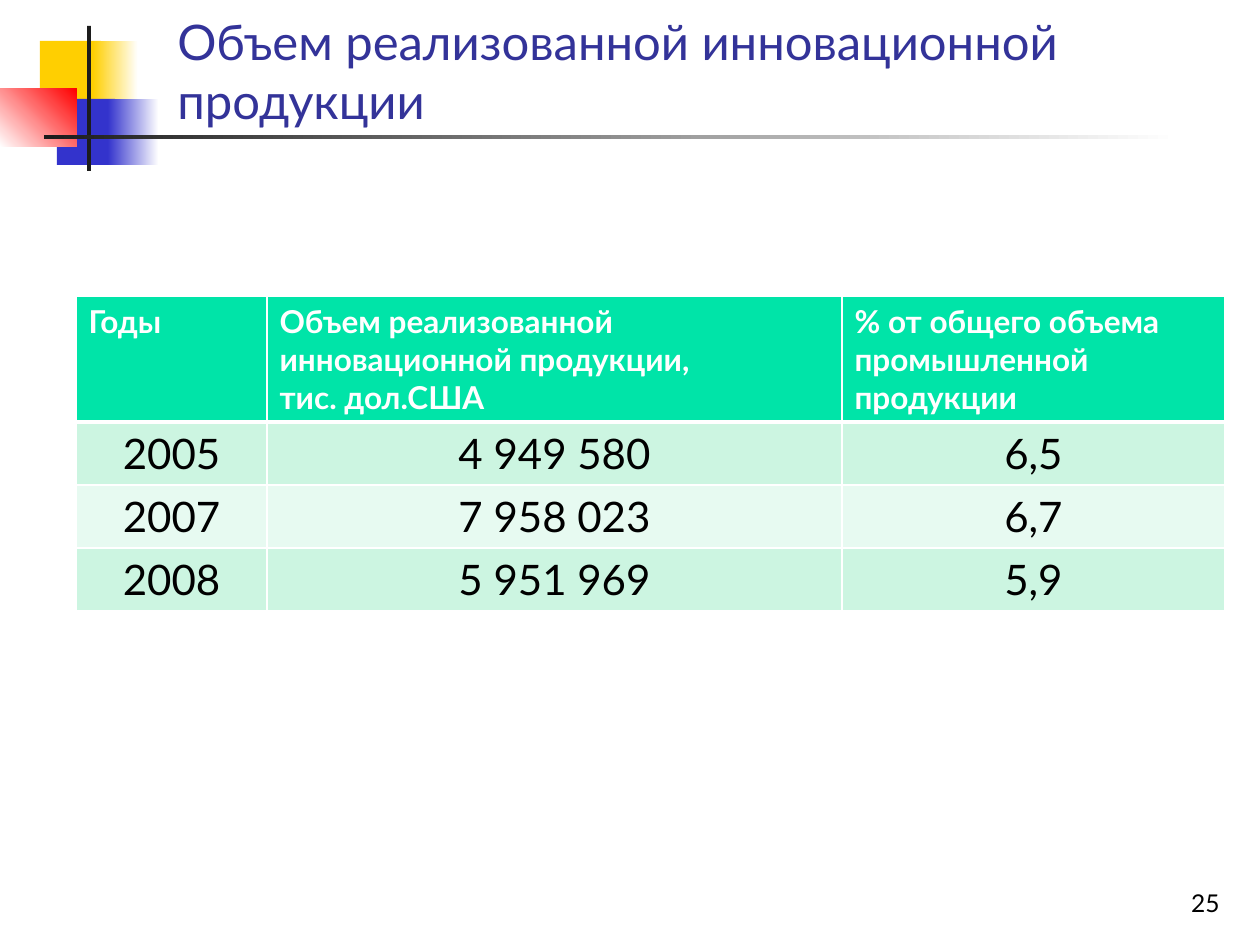
from dataclasses import dataclass

from lxml import etree
from pptx import Presentation
from pptx.dml.color import RGBColor
from pptx.enum.shapes import MSO_SHAPE
from pptx.enum.text import MSO_ANCHOR, PP_ALIGN
from pptx.oxml.ns import qn
from pptx.util import Emu, Pt

RECT = MSO_SHAPE.RECTANGLE
BOTTOM = MSO_ANCHOR.BOTTOM
LEFT, CENTER, RIGHT = PP_ALIGN.LEFT, PP_ALIGN.CENTER, PP_ALIGN.RIGHT


@dataclass(frozen=True)
class Theme:
    font: str = "Lato"
    white: str = "FFFFFF"
    black: str = "000000"
    yellow: str = "FFCF01"
    blue: str = "3333CC"
    red: str = "FF0000"
    dark: str = "1C1C1C"
    title: str = "333399"
    header: str = "00E4A8"
    bands: tuple = ("CCF5E1", "E7FAF1")
    title_size: int = 28
    header_size: int = 18
    body_size: int = 24
    number_size: int = 14


T = Theme()

# Content
TITLE = "Объем реализованной инновационной продукции"
PAGE_NUMBER = "25"
HEADER = [
    ["Годы"],
    ["Объем реализованной инновационной продукции,", "тис. дол.США"],
    ["% от общего объема промышленной продукции"],
]
ROWS = [
    ["2005", "4 949 580", "6,5"],
    ["2007", "7 958 023", "6,7"],
    ["2008", "5 951 969", "5,9"],
]

# Ornament: box in px, start colour, end colour (None = solid), angle
ORNAMENT = [
    ((40, 41, 61, 66), T.yellow, None, 0),
    ((93, 41, 45, 66), T.yellow, T.white, 0),
    ((57, 99, 58, 66), T.blue, None, 0),
    ((108, 99, 51, 66), T.blue, T.white, 0),
    ((0, 89, 77, 58), T.white, T.red, 45),
    ((87, 26, 4, 145), T.dark, None, 0),
    ((44, 135, 1134, 4), T.dark, T.white, 0),
]

# Layout in px
SCALE = 914400 // 126
SLIDE = (1260, 945)
TITLE_BOX = (165, 29, 1067, 106)
NUMBER_BOX = (970, 861, 262, 63)
TABLE_AT = (76, 296)
COLUMNS = [191, 575, 383]
HEADER_H, ROW_H = 126, 63


def px(*values):
    return [Emu(v * SCALE) for v in values]


def rgb(value):
    return RGBColor.from_string(value)


def write(tf, lines, size, color, align=LEFT, bold=False):
    tf.word_wrap = True
    for i, line in enumerate(lines):
        p = tf.paragraphs[0] if i == 0 else tf.add_paragraph()
        p.alignment = align
        r = p.add_run()
        r.text = line
        r.font.name, r.font.size, r.font.bold = T.font, Pt(size), bold
        r.font.color.rgb = rgb(color)


def add_text(s, box, text, size, color, align=LEFT):
    tf = s.shapes.add_textbox(*px(*box)).text_frame
    tf.vertical_anchor = BOTTOM
    write(tf, [text], size, color, align)


def add_block(s, box, start, end, angle):
    sp = s.shapes.add_shape(RECT, *px(*box))
    sp.shadow.inherit = False
    sp.line.fill.background()
    if end is None:
        sp.fill.solid()
        sp.fill.fore_color.rgb = rgb(start)
        return
    sp.fill.gradient()
    sp.fill.gradient_angle = angle
    for stop, color, position in zip(sp.fill.gradient_stops, (start, end), (0, 1)):
        stop.color.rgb = rgb(color)
        stop.position = position


def set_cell(cell, fill, top=1, bottom=1):
    # Borders come before the fill in the cell properties
    tc_pr = cell._tc.get_or_add_tcPr()
    for side, width in (("L", 1), ("R", 1), ("T", top), ("B", bottom)):
        ln = etree.SubElement(tc_pr, qn(f"a:ln{side}"), w=str(Pt(width)))
        solid = etree.SubElement(ln, qn("a:solidFill"))
        etree.SubElement(solid, qn("a:srgbClr"), val=T.white)
    cell.fill.solid()
    cell.fill.fore_color.rgb = rgb(fill)


def add_data_table(s):
    size = (sum(COLUMNS), HEADER_H + ROW_H * len(ROWS))
    table = s.shapes.add_table(
        len(ROWS) + 1, len(COLUMNS), *px(*TABLE_AT, *size)).table
    for column, width in zip(table.columns, px(*COLUMNS)):
        column.width = width
    for row, height in zip(table.rows, px(HEADER_H, *[ROW_H] * len(ROWS))):
        row.height = height
    for c, lines in enumerate(HEADER):
        cell = table.cell(0, c)
        set_cell(cell, T.header, bottom=3)
        write(cell.text_frame, lines, T.header_size, T.white, bold=True)
    for r, values in enumerate(ROWS):
        for c, value in enumerate(values):
            cell = table.cell(r + 1, c)
            set_cell(cell, T.bands[r % 2], top=3 if r == 0 else 1)
            write(cell.text_frame, [value], T.body_size, T.black, CENTER)


def main():
    prs = Presentation()
    prs.slide_width, prs.slide_height = px(*SLIDE)
    s = prs.slides.add_slide(prs.slide_layouts[6])
    for block in ORNAMENT:
        add_block(s, *block)
    add_text(s, TITLE_BOX, TITLE, T.title_size, T.title)
    add_data_table(s)
    add_text(s, NUMBER_BOX, PAGE_NUMBER, T.number_size, T.black, RIGHT)
    prs.save("out.pptx")


if __name__ == "__main__":
    main()
